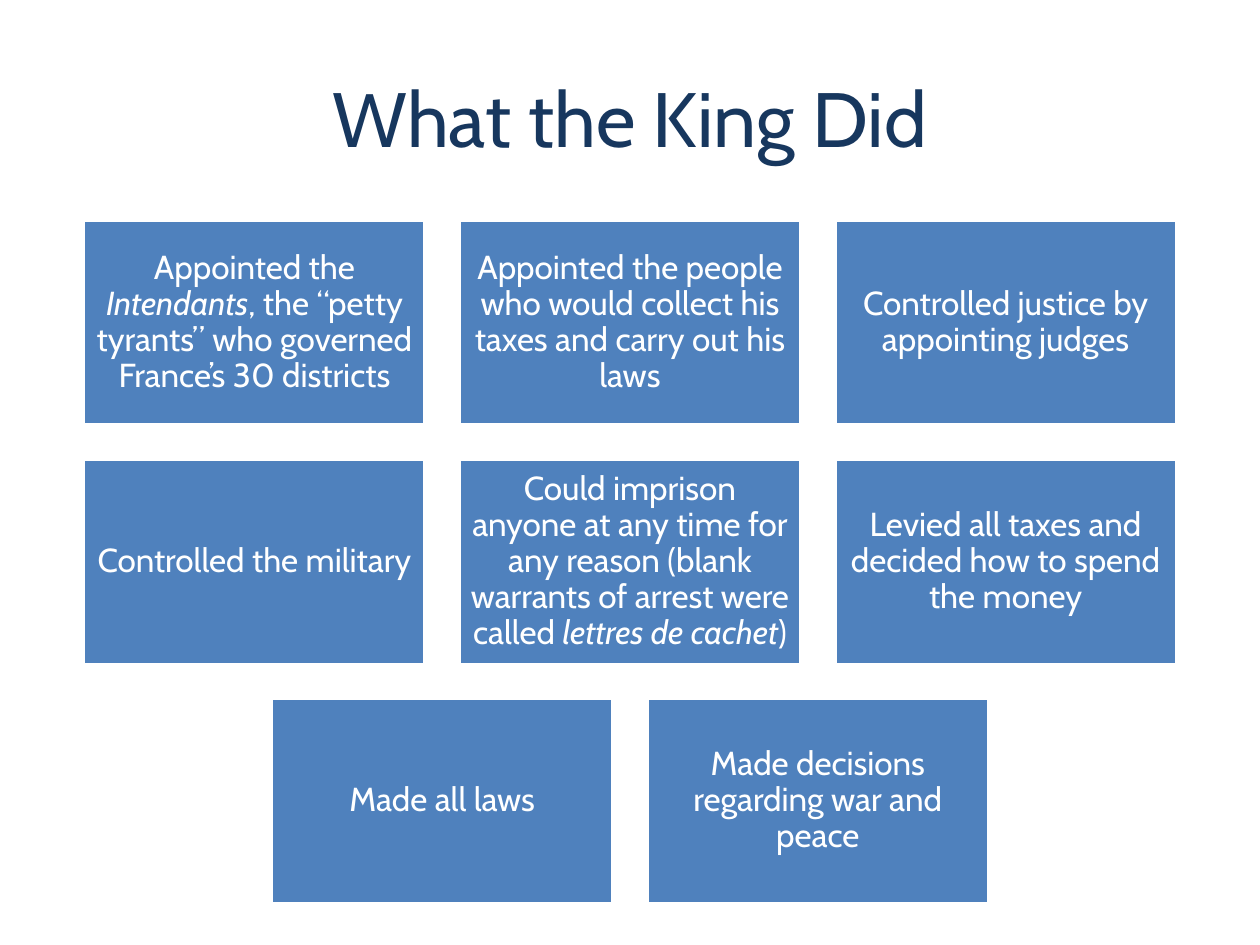
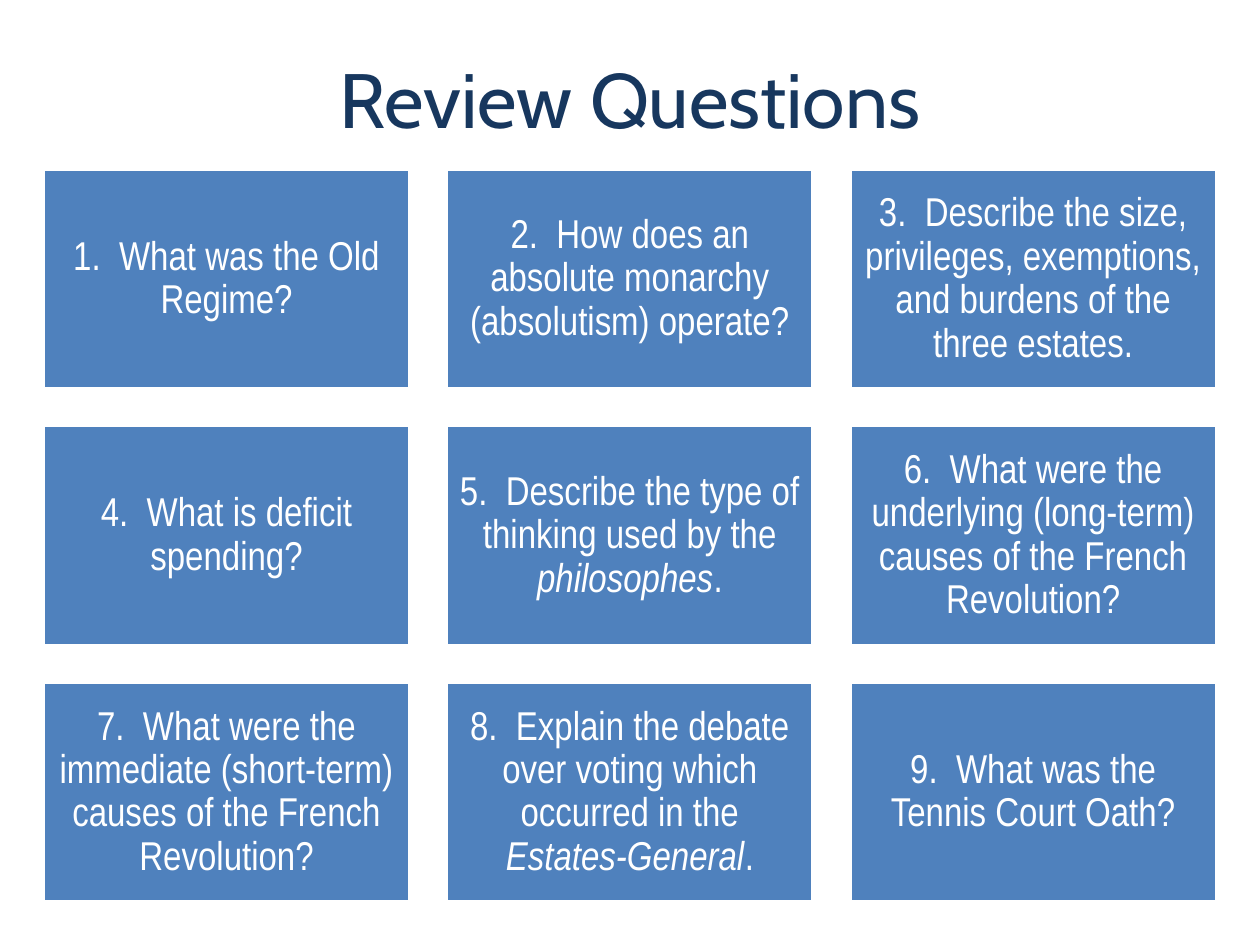
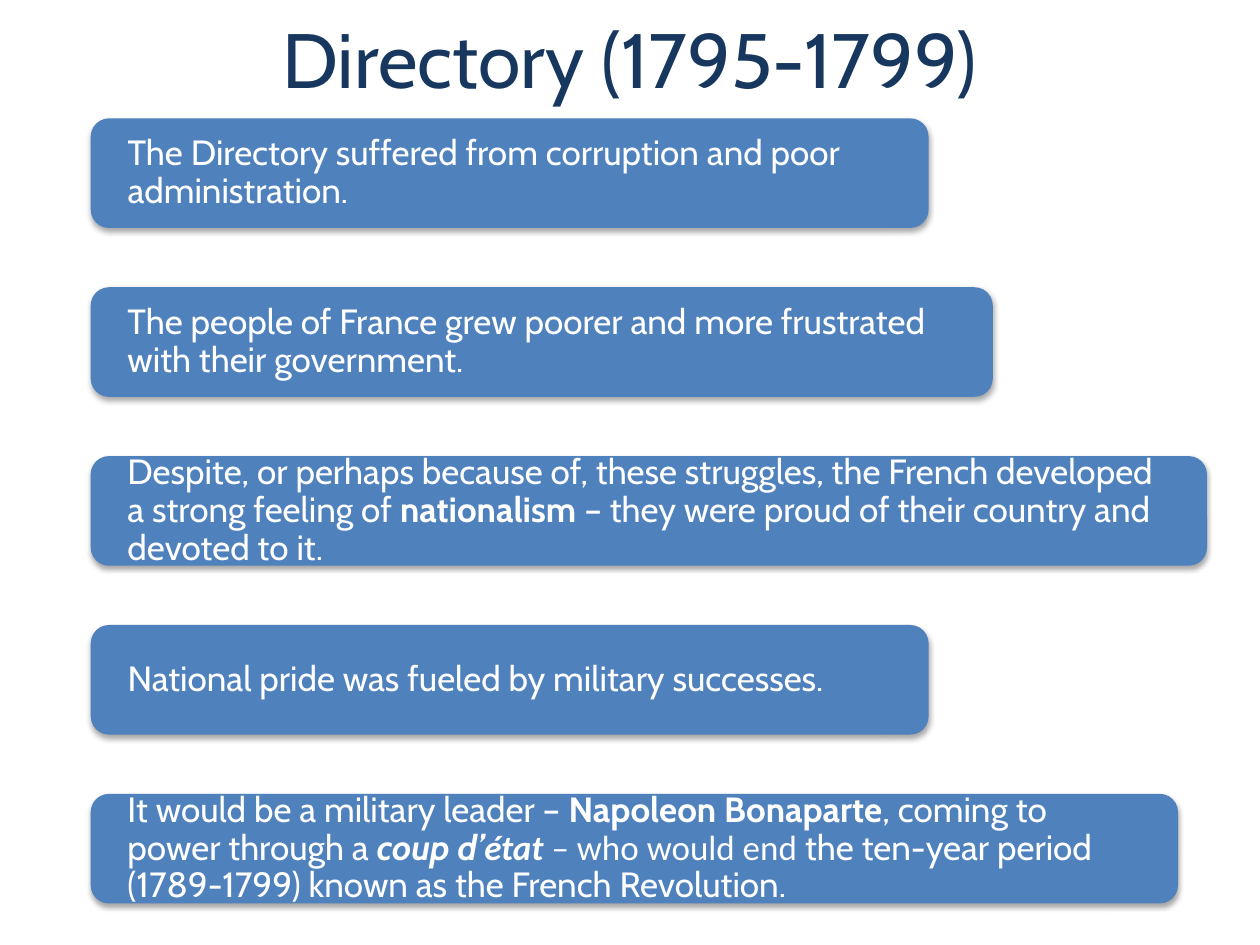
from lxml.etree import SubElement
from pptx import Presentation
from pptx.dml.color import RGBColor
from pptx.enum.shapes import MSO_SHAPE
from pptx.enum.text import MSO_ANCHOR, PP_ALIGN
from pptx.oxml.ns import qn
from pptx.util import Inches, Pt

WIDTH, HEIGHT = Inches(10), Inches(7.5)
NAVY, BLUE, WHITE, BLACK = "17375E", "4F81BD", "FFFFFF", "000000"
FONT = "Cabin"

DEEDS = [
    [
        ["Appointed the ", ("Intendants", "i"),
         ", the “petty tyrants” who governed France’s 30 districts"],
        ["Appointed the people who would collect his taxes and carry out his laws"],
        ["Controlled justice by appointing judges"],
    ],
    [
        ["Controlled the military"],
        ["Could imprison anyone at any time for any reason "
         "(blank warrants of arrest were called ", ("lettres de cachet", "i"), ")"],
        ["Levied all taxes and decided how to spend the money"],
    ],
    [
        ["Made all laws"],
        ["Made decisions regarding war and peace"],
    ],
]

QUESTIONS = [
    [
        ["1.  What was the Old Regime?"],
        ["2.  How does an absolute monarchy (absolutism) operate?"],
        ["3.  Describe the size, privileges, exemptions, and burdens of the three estates."],
    ],
    [
        ["4.  What is deficit spending?"],
        ["5.  Describe the type of thinking used by the ", ("philosophes", "i"), "."],
        ["6.  What were the underlying (long-term) causes of the French Revolution?"],
    ],
    [
        ["7.  What were the immediate (short-term) causes of the French Revolution?"],
        ["8.  Explain the debate over voting which occurred in the ",
         ("Estates-General", "i"), "."],
        ["9.  What was the Tennis Court Oath?"],
    ],
]

EVENTS = [
    (66.5, ["The Directory suffered from corruption and poor administration."]),
    (71.6, ["The people of France grew poorer and more frustrated with their government."]),
    (88.6, ["Despite, or perhaps because of, these struggles, the French developed "
            "a strong feeling of ", ("nationalism", "b"),
            " – they were proud of their country and devoted to it."]),
    (66.5, ["National pride was fueled by military successes."]),
    (86.3, ["It would be a military leader – ", ("Napoleon Bonaparte", "b"),
            ", coming to power through a ", ("coup d’", "bi"),
            ("état ", "bi", "Calibri"), ("– who would end ", "", "Calibri"),
            "the ten-year period (1789-1799) known as the French Revolution."]),
]


def rgb(code):
    """Turn a hex string into a colour."""
    return RGBColor.from_string(code)


def area(left, top, width, height):
    """Turn percentages of the slide into a position and size."""
    return (round(WIDTH * left / 100), round(HEIGHT * top / 100),
            round(WIDTH * width / 100), round(HEIGHT * height / 100))


def write(shape, parts, size, color=WHITE, font=FONT, align=PP_ALIGN.CENTER, space=0.9):
    """Fill a shape with one paragraph of plain and styled runs."""
    frame = shape.text_frame
    frame.word_wrap = True
    frame.vertical_anchor = MSO_ANCHOR.MIDDLE
    para = frame.paragraphs[0]
    para.alignment = align
    para.line_spacing = space
    para.font.name = font
    para.font.size = Pt(size)
    para.font.color.rgb = rgb(color)
    for part in parts:
        text, style, *face = (part, "") if isinstance(part, str) else part
        run = para.add_run()
        run.text = text
        if "b" in style:
            run.font.bold = True
        if "i" in style:
            run.font.italic = True
        if face:
            run.font.name = face[0]


def pad(shape, side, edge):
    """Set the inner margins of a shape in inches."""
    frame = shape.text_frame
    frame.margin_left = frame.margin_right = Inches(side)
    frame.margin_top = frame.margin_bottom = Inches(edge)


def shade(shape):
    """Give a shape a soft shadow straight below it."""
    effects = shape._element.spPr.find(qn("a:effectLst"))
    outer = SubElement(effects, qn("a:outerShdw"), blurRad="40000", dist="23000",
                       dir="5400000", rotWithShape="0")
    tint = SubElement(outer, qn("a:srgbClr"), val=BLACK)
    SubElement(tint, qn("a:alpha"), val="35000")


def panel(slide, kind, place):
    """Add a blue shape without an outline."""
    shape = slide.shapes.add_shape(kind, *area(*place))
    shape.shadow.inherit = False
    shape.fill.solid()
    shape.fill.fore_color.rgb = rgb(BLUE)
    shape.line.fill.background()
    return shape


def start(deck, title, top, height):
    """Add a blank slide with its title."""
    slide = deck.slides.add_slide(deck.slide_layouts[6])
    box = slide.shapes.add_textbox(*area(5, top, 90, height))
    write(box, [title], 44, NAVY, space=1)
    return slide


def tiles(slide, rows, top, width, size, inset, font=FONT):
    """Lay out centred rows of tiles with gaps of a tenth of their width."""
    gap = width / 10
    ratio = WIDTH / HEIGHT
    height = width * 0.6 * ratio
    for row, cells in enumerate(rows):
        left = (100 - len(cells) * (width + gap) + gap) / 2
        for col, parts in enumerate(cells):
            place = (left + col * (width + gap), top + row * (height + gap * ratio),
                     width, height)
            tile = panel(slide, MSO_SHAPE.RECTANGLE, place)
            tile.line.color.rgb = rgb(WHITE)
            tile.line.width = Pt(2)
            pad(tile, inset, inset)
            write(tile, parts, size, font=font)


def bars(slide, items, top, step, height):
    """Stack rounded bars of differing widths at equal steps."""
    for row, (width, parts) in enumerate(items):
        place = (7.2, top + row * step, width, height)
        bar = panel(slide, MSO_SHAPE.ROUNDED_RECTANGLE, place)
        shade(bar)
        pad(bar, 0.25, 0)
        write(bar, parts, 20, align=PP_ALIGN.LEFT)


def main():
    """Build and save the deck."""
    deck = Presentation()
    deck.slide_width, deck.slide_height = WIDTH, HEIGHT
    king = start(deck, "What the King Did", 4, 16.67)
    tiles(king, DEEDS, 23.33, 27.1, 19, 0.08)
    review = start(deck, "Review Questions", 0, 20.67)
    tiles(review, QUESTIONS, 17.87, 29.1, 23, 0.1, "Arial Narrow")
    rule = start(deck, "Directory (1795-1799)", 0, 12.27)
    bars(rule, EVENTS, 12.53, 17.87, 11.6)
    deck.save("out.pptx")


if __name__ == "__main__":
    main()
